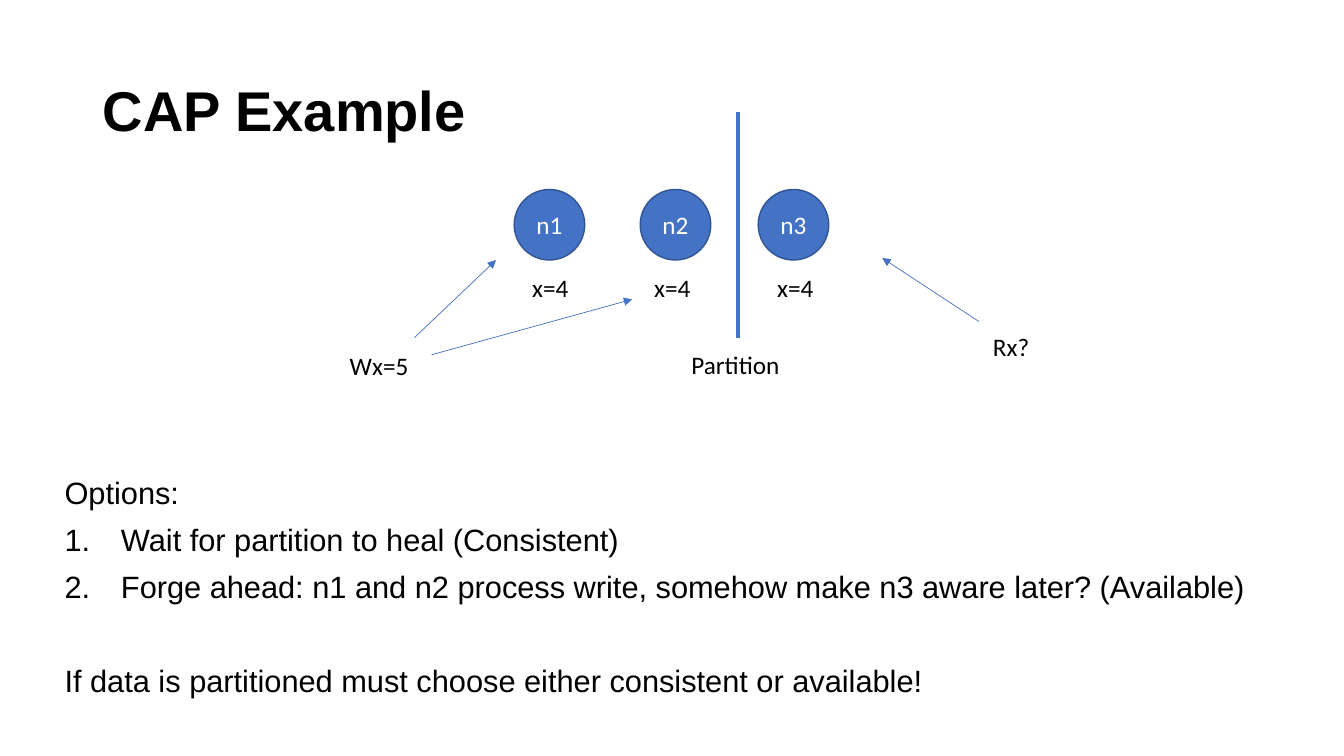
from dataclasses import dataclass

from pptx import Presentation
from pptx import util as u
from pptx.dml.color import RGBColor
from pptx.enum import shapes, text
from pptx.oxml.ns import qn
from lxml import etree

PX = 9144  # EMU per px, 100 px to the inch


@dataclass(frozen=True)
class Theme:
    ink: RGBColor = RGBColor(0, 0, 0)
    paper: RGBColor = RGBColor(255, 255, 255)
    blue: RGBColor = RGBColor(0x44, 0x72, 0xC4)
    edge: RGBColor = RGBColor(0x32, 0x54, 0x91)
    head_font: str = "Arial"
    label_font: str = "Calibri"
    title: int = 40
    body: int = 22
    label: int = 18


T = Theme()


def px(*values):
    return [u.Emu(v * PX) for v in values]


def add_run(p, words, size, font, color=T.ink, bold=False):
    r = p.add_run()
    r.text = words
    r.font.size, r.font.name, r.font.bold = u.Pt(size), font, bold
    r.font.color.rgb = color


def place(sp, *box):
    sp.left, sp.top, sp.width, sp.height = px(*box)
    sp.text_frame.auto_size = text.MSO_AUTO_SIZE.NONE
    return sp.text_frame


def set_title(s, words):
    tf = place(s.shapes.title, 92, 40, 1150, 145)
    tf.vertical_anchor = text.MSO_ANCHOR.MIDDLE
    p = tf.paragraphs[0]
    p.alignment, p.line_spacing = text.PP_ALIGN.LEFT, 0.9
    add_run(p, words, T.title, T.head_font, bold=True)


def set_body(s, items):
    tf = place(s.placeholders[1], 54, 469, 1270, 260)
    tf.vertical_anchor = text.MSO_ANCHOR.TOP
    for i, (words, numbered, before) in enumerate(items):
        p = tf.paragraphs[0] if i == 0 else tf.add_paragraph()
        p.line_spacing, p.space_before = 0.9, u.Pt(before)
        pPr = p._p.get_or_add_pPr()
        indent = 56 * PX if numbered else 0
        pPr.set("marL", str(indent))
        pPr.set("indent", str(-indent))
        if numbered:
            etree.SubElement(pPr, qn("a:buFont"), typeface="+mj-lt")
            etree.SubElement(pPr, qn("a:buAutoNum"), type="arabicPeriod")
        else:
            etree.SubElement(pPr, qn("a:buNone"))
        add_run(p, words, T.body, T.head_font)


def add_node(s, x, name):
    sp = s.shapes.add_shape(shapes.MSO_SHAPE.OVAL, *px(x, 188, 70, 70))
    sp.shadow.inherit = False
    sp.fill.solid()
    sp.fill.fore_color.rgb = T.blue
    sp.line.color.rgb, sp.line.width = T.edge, u.Pt(1)
    tf = sp.text_frame
    tf.vertical_anchor = text.MSO_ANCHOR.MIDDLE
    p = tf.paragraphs[0]
    p.alignment = text.PP_ALIGN.CENTER
    add_run(p, name, T.label, T.label_font, T.paper)


def add_label(s, x, y, w, words):
    tf = s.shapes.add_textbox(*px(x, y, w, 40)).text_frame
    tf.word_wrap = False
    add_run(tf.paragraphs[0], words, T.label, T.label_font)


def add_line(s, start, end, width, arrow=False):
    cx = s.shapes.add_connector(shapes.MSO_CONNECTOR.STRAIGHT, *px(*start, *end))
    cx.line.color.rgb, cx.line.width = T.blue, u.Pt(width)
    if arrow:
        etree.SubElement(cx.line._get_or_add_ln(), qn("a:tailEnd"), type="triangle")
    etree.SubElement(cx._element.spPr, qn("a:effectLst"))


def main():
    prs = Presentation()
    prs.slide_width, prs.slide_height = px(1333, 750)
    s = prs.slides.add_slide(prs.slide_layouts[1])

    # Title and options
    set_title(s, "CAP Example")
    set_body(s, [
        ("Options:", False, 0),
        ("Wait for partition to heal (Consistent)", True, 10),
        ("Forge ahead: n1 and n2 process write, somehow make n3 aware later? (Available)",
         True, 10),
        ("If data is partitioned must choose either consistent or available!", False, 43),
    ])

    # Nodes with their stored values
    for name, node_x, value_x in (("n1", 510, 518), ("n2", 635, 639), ("n3", 752, 761)):
        add_node(s, node_x, name)
        add_label(s, value_x, 265, 62, "x=4")

    # Partition
    add_line(s, (732, 111), (732, 335), 3)
    add_label(s, 676, 342, 116, "Partition")

    # Write and read requests
    add_label(s, 337, 343, 79, "Wx=5")
    add_label(s, 975, 324, 56, "Rx?")
    for start, end in (((411, 335), (492, 258)),
                       ((428, 352), (627, 297)),
                       ((971, 319), (875, 256))):
        add_line(s, start, end, 0.5, arrow=True)

    prs.save("out.pptx")


if __name__ == "__main__":
    main()
